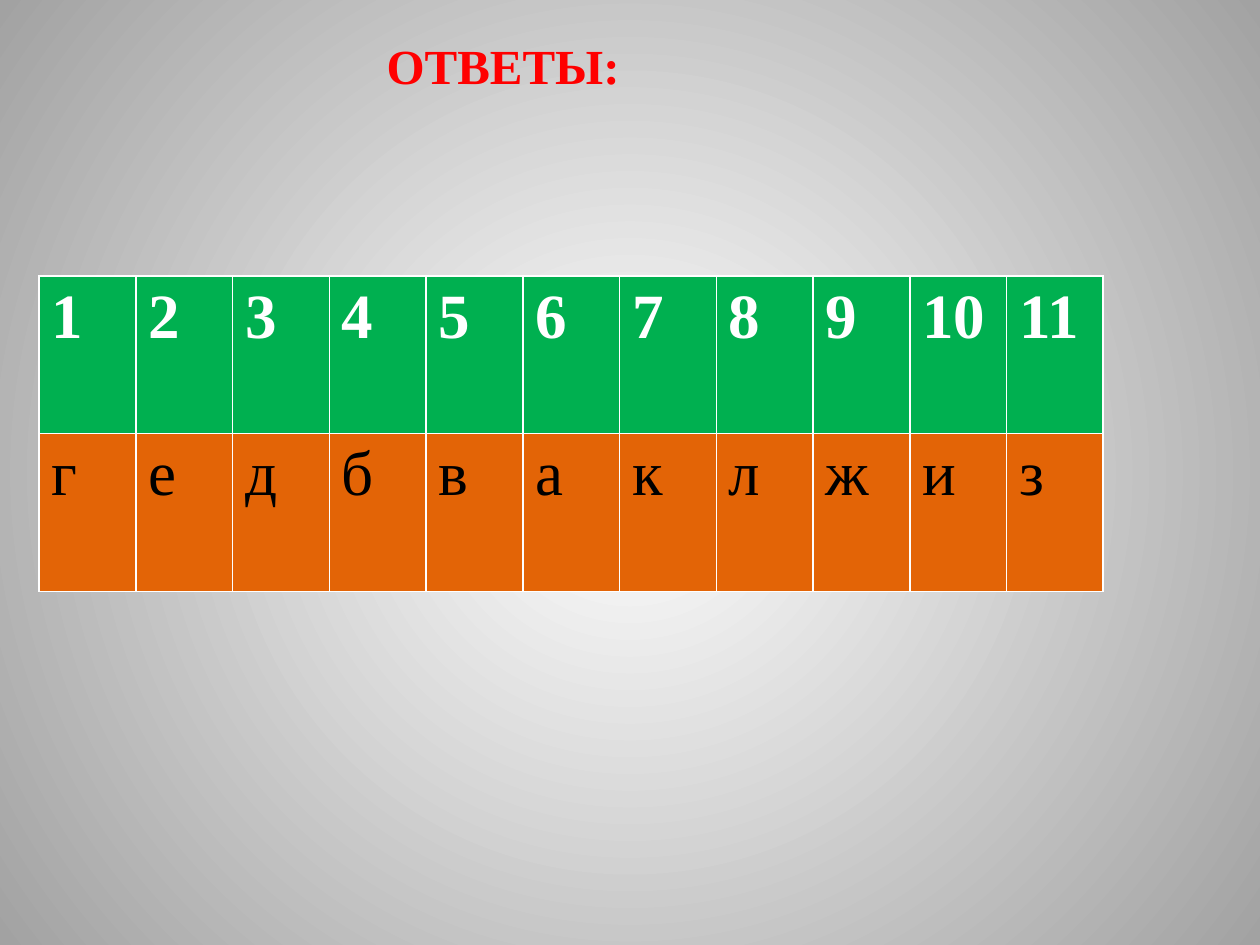
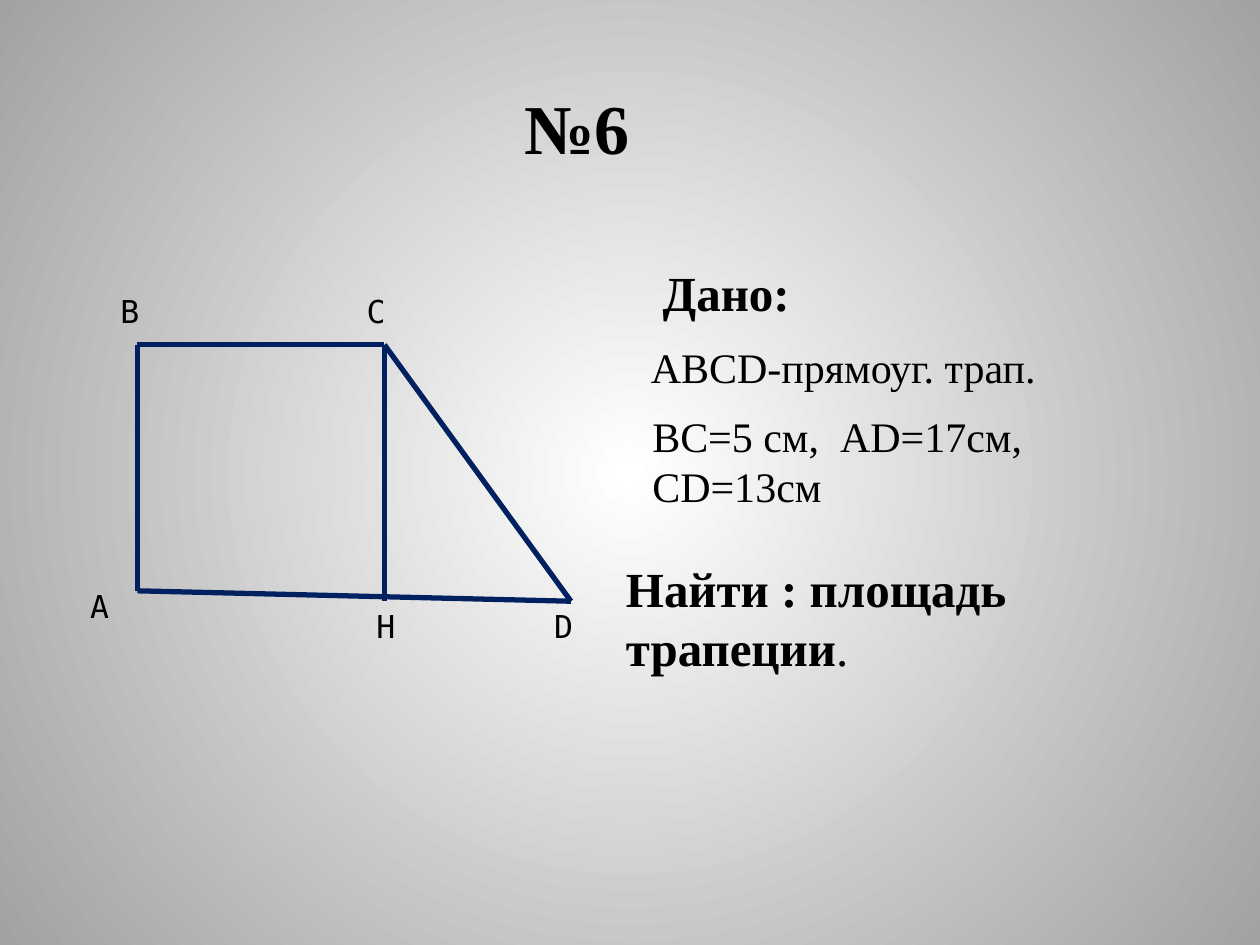
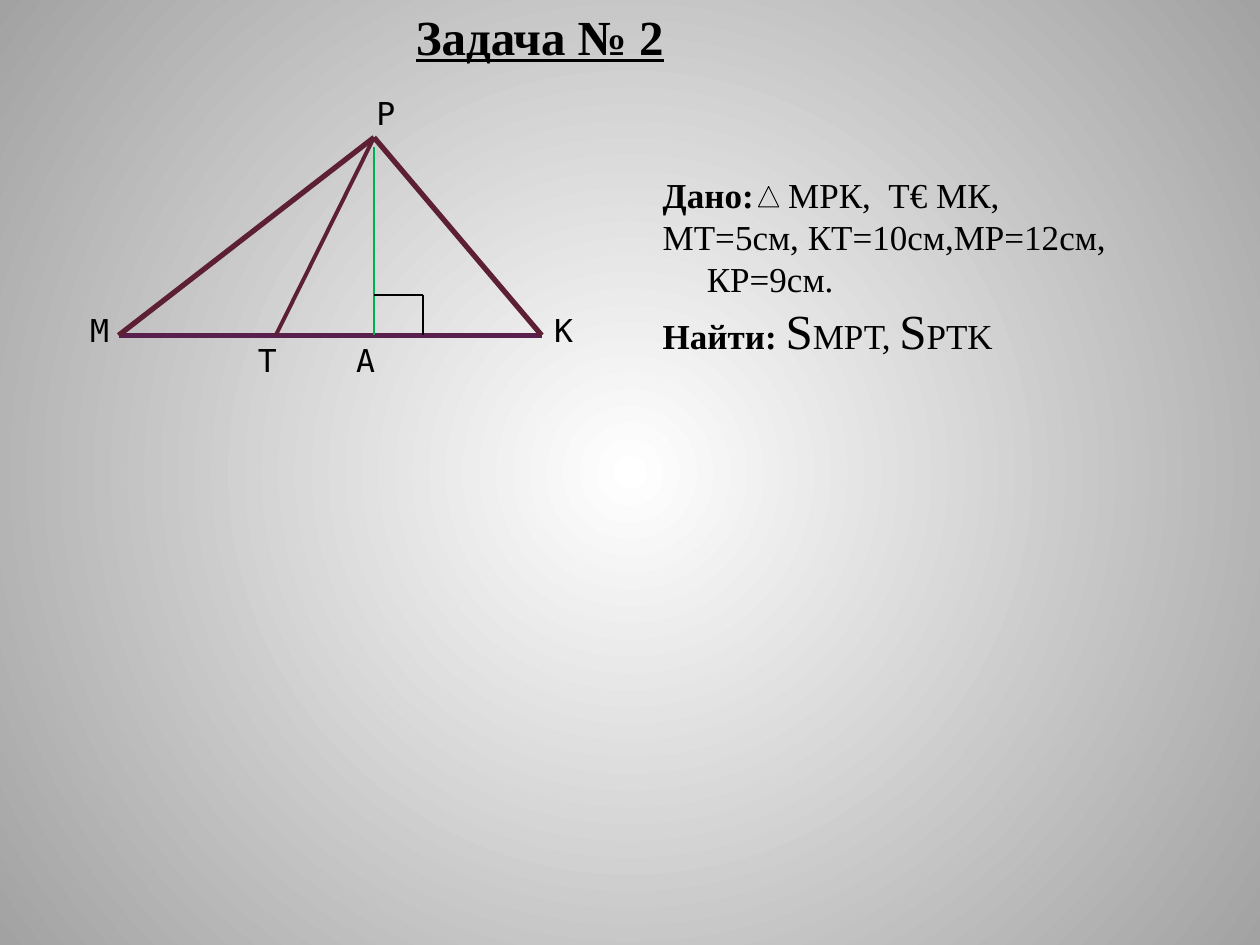
"""Build three geometry slides: an answer table and two area problems."""
from lxml import etree
from pptx import Presentation
from pptx.dml.color import RGBColor
from pptx.enum.shapes import MSO_CONNECTOR, MSO_SHAPE
from pptx.enum.text import MSO_ANCHOR, MSO_AUTO_SIZE, PP_ALIGN
from pptx.oxml.ns import qn
from pptx.util import Cm, Pt

STRAIGHT = MSO_CONNECTOR.STRAIGHT
TRIANGLE = MSO_SHAPE.ISOSCELES_TRIANGLE
TOP, MIDDLE = MSO_ANCHOR.TOP, MSO_ANCHOR.MIDDLE
LEFT = PP_ALIGN.LEFT
FIT_SHAPE = MSO_AUTO_SIZE.SHAPE_TO_FIT_TEXT
TITLE_ONLY = 5

WHITE = RGBColor(0xFF, 0xFF, 0xFF)
BLACK = RGBColor(0x00, 0x00, 0x00)
GRAY = RGBColor(0xA2, 0xA2, 0xA2)
RED = RGBColor(0xFF, 0x00, 0x00)
GREEN = RGBColor(0x00, 0xB0, 0x50)
ORANGE = RGBColor(0xE3, 0x64, 0x06)
NAVY = RGBColor(0x00, 0x20, 0x60)
PLUM = RGBColor(0x59, 0x1F, 0x4D)
WINE = RGBColor(0x5C, 0x1F, 0x34)

SERIF = "Times New Roman"
MONO = "DejaVu Sans Mono"


def set_background(master):
    """Give every slide the same radial gradient."""
    fill = master.background.fill
    fill.gradient()
    for stop, color in zip(fill.gradient_stops, (WHITE, GRAY)):
        stop.color.rgb = color
    linear = next(master.element.cSld.iter(qn("a:lin")))
    radial = etree.Element(qn("a:path"), {"path": "circle"})
    etree.SubElement(radial, qn("a:fillToRect"), dict.fromkeys("ltrb", "50000"))
    linear.getparent().replace(linear, radial)


def style_run(run, size, bold=False, color=BLACK, font=SERIF):
    """Set the look of one run."""
    run.font.name = font
    run.font.size = Pt(size)
    run.font.bold = bold
    run.font.color.rgb = color


def add_titled_slide(deck, title, box, size, color=BLACK, underline=False):
    """Add a slide and place its bold title."""
    slide = deck.slides.add_slide(deck.slide_layouts[TITLE_ONLY])
    heading = slide.shapes.title
    heading.left, heading.top, heading.width, heading.height = map(Cm, box)
    frame = heading.text_frame
    frame.text = title
    frame.word_wrap = False
    frame.auto_size = FIT_SHAPE
    frame.vertical_anchor = TOP
    frame.paragraphs[0].alignment = LEFT
    run = frame.paragraphs[0].runs[0]
    style_run(run, size, True, color)
    run.font.underline = underline
    return slide


def add_text(slide, box, *paragraphs, wrap=False, anchor=TOP, font=SERIF):
    """Add a text box; each paragraph is a list of (text, size, bold)."""
    frame = slide.shapes.add_textbox(*map(Cm, box)).text_frame
    frame.word_wrap = wrap
    frame.auto_size = FIT_SHAPE
    frame.vertical_anchor = anchor
    for index, pieces in enumerate(paragraphs):
        paragraph = frame.add_paragraph() if index else frame.paragraphs[0]
        for text, size, bold in pieces:
            run = paragraph.add_run()
            run.text = text
            style_run(run, size, bold, font=font)
    return frame


def add_vertex_labels(slide, labels):
    """Name the points of a drawing."""
    for letter, left, top in labels:
        add_text(slide, (left, top, 0.9, 1.02), [(letter, 18, False)], font=MONO)


def add_segment(slide, start, end, color, width):
    """Draw a straight segment between two points."""
    segment = slide.shapes.add_connector(STRAIGHT, *map(Cm, start + end))
    segment.line.color.rgb = color
    segment.line.width = Pt(width)
    etree.SubElement(segment.element.spPr, qn("a:effectLst"))


def add_answer_table(slide, box, rows):
    """Add the table; each row is (texts, fill, text colour, bold)."""
    left, top, column_width, row_height = map(Cm, box)
    count = len(rows[0][0])
    table = slide.shapes.add_table(len(rows), count, left, top,
                                   column_width * count, row_height * len(rows)).table
    table.horz_banding = False
    for column in table.columns:
        column.width = column_width
    for row, (texts, fill, color, bold) in zip(table.rows, rows):
        row.height = row_height
        for cell, text in zip(row.cells, texts):
            cell.fill.solid()
            cell.fill.fore_color.rgb = fill
            cell.text_frame.text = text
            style_run(cell.text_frame.paragraphs[0].runs[0], 36, bold, color)


def build_answers(deck):
    """Build the answers slide."""
    slide = add_titled_slide(deck, "ОТВЕТЫ:", (7.54, 0.58, 5.26, 1.45), 28, RED)
    numbers = [str(number) for number in range(1, 12)]
    add_answer_table(slide, (0.79, 5.56, 1.95, 3.18),
                     [(numbers, GREEN, WHITE, True),
                      ("гедбваклжиз", ORANGE, BLACK, False)])


def build_trapezoid(deck):
    """Build the right trapezoid problem."""
    slide = add_titled_slide(deck, "№6", (10.31, 1.57, 2.67, 1.96), 40)
    a, b, c = (2.77, 11.91), (2.77, 6.95), (7.75, 6.95)
    d, h = (11.51, 12.12), (7.75, 12.12)
    for start, end in ((a, d), (a, b), (b, c), (c, d), (c, h)):
        add_segment(slide, start, end, NAVY, 3)
    add_vertex_labels(slide, [("А", 1.57, 11.71), ("В", 2.18, 5.77), ("С", 7.14, 5.77),
                              ("D", 10.92, 12.12), ("H", 7.34, 12.12)])
    add_text(slide, (13.11, 5.16, 3.1, 1.45), [("Дано:", 28, True)])
    add_text(slide, (12.87, 6.76, 8.4, 1.28), [("ABCD-прямоуг. трап.", 24, False)])
    add_text(slide, (12.9, 8.13, 10.72, 2.31), [("BC=5 см,  AD=17см, CD=13см", 24, False)],
             wrap=True, anchor=MIDDLE)
    add_text(slide, (12.37, 11.13, 8.86, 2.64),
             [("Найти : площадь трапеции", 28, True), (".", 28, False)], wrap=True)


def build_triangle(deck):
    """Build the triangle problem."""
    slide = add_titled_slide(deck, "Задача № 2", (8.13, 0, 5.94, 1.45), 28, underline=True)
    m, p, k, t = (2.39, 6.76), (7.54, 2.77), (10.92, 6.76), (5.56, 6.76)
    foot, corner_left = (7.54, 6.76), (7.54, 5.95)
    corner, corner_base = (8.53, 5.95), (8.53, 6.76)
    for start, end, color, width in (
            (m, k, PLUM, 3), (m, p, WINE, 3), (p, k, WINE, 3), (p, t, WINE, 2.25),
            ((7.54, 2.97), foot, GREEN, 0.9), (corner_left, corner, BLACK, 0.9),
            (corner, corner_base, BLACK, 0.9)):
        add_segment(slide, start, end, color, width)
    add_vertex_labels(slide, [("М", 1.57, 6.15), ("Р", 7.34, 1.78), ("К", 10.92, 6.15),
                              ("Т", 4.95, 6.76), ("А", 6.93, 6.76)])

    given = add_text(slide, (13.11, 3.38, 9.53, 2.82),
                     [("Дано:", 20, True), ("\tМРК,  Т€ МК,", 20, False)],
                     [("МТ=5см, КТ=10см,МР=12см,", 20, False)],
                     [("КР=9см.", 20, False)], wrap=True)
    first, _, last = given.paragraphs
    tabs = etree.SubElement(first._p.get_or_add_pPr(), qn("a:tabLst"))
    etree.SubElement(tabs, qn("a:tab"), pos=str(Cm(2.53)), algn="l")
    last._p.get_or_add_pPr().set("marL", str(Cm(0.89)))

    triangle_sign = slide.shapes.add_shape(TRIANGLE, *map(Cm, (15.29, 3.76, 0.41, 0.41)))
    triangle_sign.shadow.inherit = False
    triangle_sign.fill.background()
    triangle_sign.line.color.rgb = BLACK
    triangle_sign.line.width = Pt(0.5)
    add_text(slide, (13.11, 5.94, 7.24, 1.45),
             [("Найти: ", 20, True), ("S", 28, False), ("МРТ, ", 20, False),
              ("S", 28, False), ("PTK", 20, False)])


def main():
    """Build and save the deck."""
    deck = Presentation()
    deck.slide_width, deck.slide_height = Cm(25.4), Cm(19.05)
    set_background(deck.slide_master)
    build_answers(deck)
    build_trapezoid(deck)
    build_triangle(deck)
    deck.save("out.pptx")


if __name__ == "__main__":
    main()
